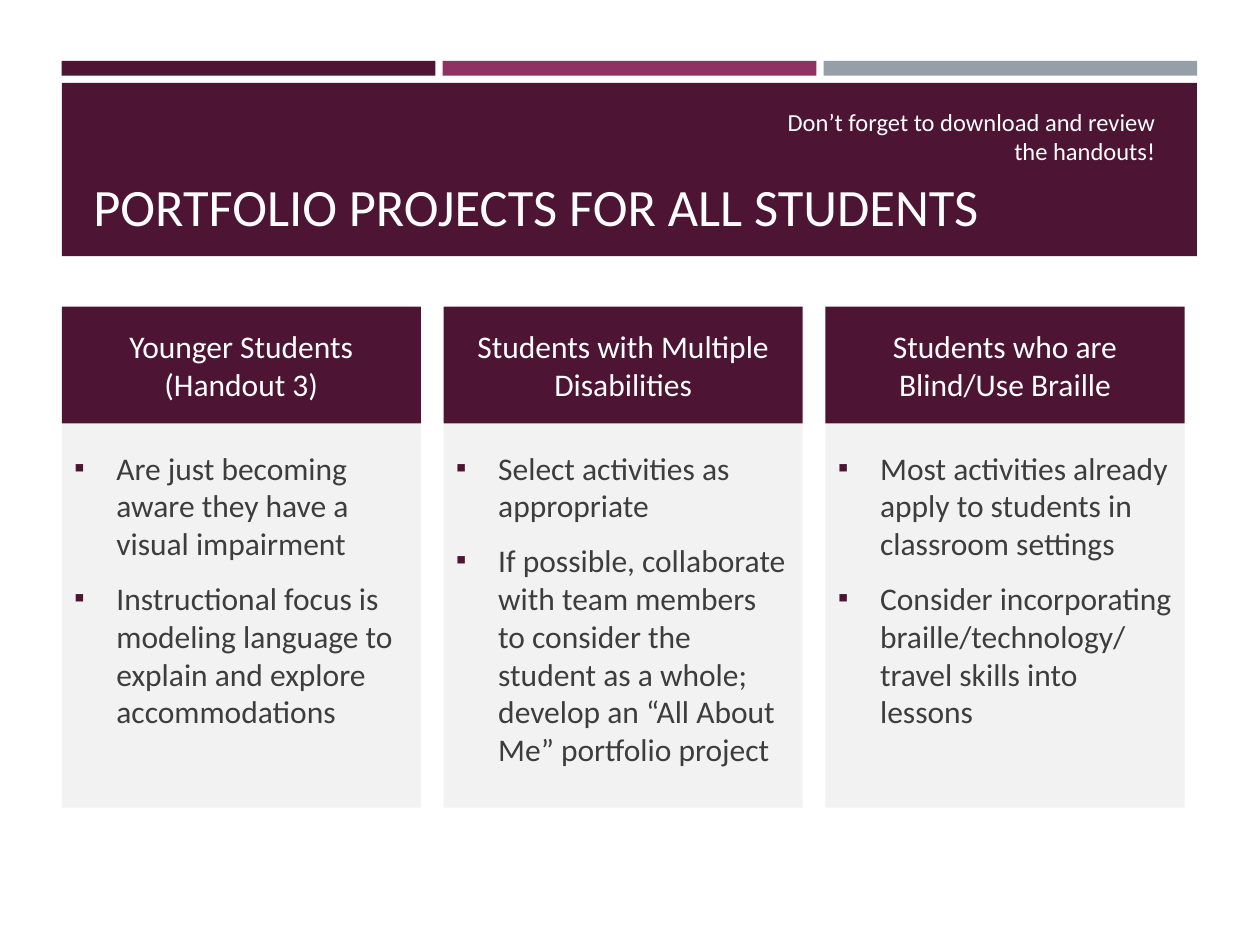
from lxml import etree
from pptx import Presentation
from pptx.dml.color import RGBColor
from pptx.enum import shapes, text
from pptx.oxml.ns import qn
from pptx.util import Pt

PLUM = RGBColor(0x4D, 0x14, 0x34)
BERRY = RGBColor(0x90, 0x31, 0x63)
SLATE = RGBColor(0x96, 0x9F, 0xA7)
PALE = RGBColor(0xF2, 0xF2, 0xF2)
INK = RGBColor(0x3D, 0x3D, 0x3D)
WHITE = RGBColor(0xFF, 0xFF, 0xFF)

LEFT = 35.3
COLUMN_STEP, COLUMN_WIDTH = 218.2, 205.2
BAR_STEP, BAR_WIDTH = 217.7, 213.5

prs = Presentation()
prs.slide_width, prs.slide_height = Pt(720), Pt(540)
s = prs.slides.add_slide(prs.slide_layouts.get_by_name("Comparison"))
ph = {sp.placeholder_format.idx: sp for sp in s.placeholders}


def add_rect(x, y, w, h, color):
    sp = s.shapes.add_shape(shapes.MSO_SHAPE.RECTANGLE, Pt(x), Pt(y), Pt(w), Pt(h))
    sp.shadow.inherit = False
    sp.fill.solid()
    sp.fill.fore_color.rgb = color
    sp.line.fill.background()
    return sp


def write(sp, lines, size, color, align, anchor, gaps=True):
    tf = sp.text_frame
    tf.text = "\n".join(lines)
    frame = {"word_wrap": True, "auto_size": text.MSO_AUTO_SIZE.NONE,
             "vertical_anchor": anchor}
    for name, value in frame.items():
        setattr(tf, name, value)
    para = {"alignment": align}
    if gaps:
        para.update(space_before=Pt(size * 0.2), space_after=Pt(6))
    for p in tf.paragraphs:
        for name, value in para.items():
            setattr(p, name, value)
        for r in p.runs:
            for name, value in {"name": "Calibri", "size": Pt(size), "bold": False}.items():
                setattr(r.font, name, value)
            r.font.color.rgb = color


bars = [add_rect(LEFT + i * BAR_STEP, 34.8, BAR_WIDTH, 8.4, color)
        for i, color in enumerate((PLUM, BERRY, SLATE))]
bars.append(add_rect(LEFT, 47.4, 648.7, 99, PLUM))
for sp in bars:
    s.shapes._spTree.insert(2, sp._element)

placed = {0: (46.1, 54, 629.3, 85), 1: (429.1, 54.7, 238.3, 46.1)}
for idx, box in placed.items():
    for name, value in zip(("left", "top", "width", "height"), box):
        setattr(ph[idx], name, Pt(value))
write(ph[0], ["PORTFOLIO PROJECTS FOR ALL STUDENTS"], 30, WHITE,
      text.PP_ALIGN.LEFT, text.MSO_ANCHOR.BOTTOM, gaps=False)
write(ph[1], ["Don’t forget to download and review the handouts!"], 14, WHITE,
      text.PP_ALIGN.RIGHT, text.MSO_ANCHOR.MIDDLE)

columns = [
    (2, "Younger Students (Handout 3)",
     ["Are just becoming aware they have a visual impairment",
      "Instructional focus is modeling language to explain and explore accommodations"]),
    (3, "Students with Multiple Disabilities",
     ["Select activities as appropriate",
      "If possible, collaborate with team members to consider the student as a whole; "
      "develop an “All About Me” portfolio project"]),
    (4, "Students who are Blind/Use Braille",
     ["Most activities already apply to students in classroom settings",
      "Consider incorporating braille/technology/ travel skills into lessons"]),
]
for i, (idx, heading, items) in enumerate(columns):
    x = LEFT + i * COLUMN_STEP
    header = add_rect(x, 175.2, COLUMN_WIDTH, 66.8, PLUM)
    write(header, [heading], 18, WHITE, text.PP_ALIGN.CENTER, text.MSO_ANCHOR.MIDDLE)

    sp = ph[idx]
    box = {"left": x, "top": 242, "width": COLUMN_WIDTH, "height": 219.6}
    for name, value in box.items():
        setattr(sp, name, Pt(value))
    sp.fill.solid()
    sp.fill.fore_color.rgb = PALE
    write(sp, items, 18, INK, text.PP_ALIGN.LEFT, text.MSO_ANCHOR.TOP)
    sp.text_frame.margin_top = Pt(14.4)
    for p in sp.text_frame.paragraphs:
        pPr = p._p.get_or_add_pPr()
        pPr.set("marL", str(Pt(24)))
        pPr.set("indent", str(-Pt(24)))
        clr = etree.SubElement(pPr, qn("a:buClr"))
        etree.SubElement(clr, qn("a:srgbClr"), val=str(PLUM))
        etree.SubElement(pPr, qn("a:buSzPct"), val="92000")
        etree.SubElement(pPr, qn("a:buFont"), typeface="Calibri")
        etree.SubElement(pPr, qn("a:buChar"), char="▪")

prs.save("out.pptx")
